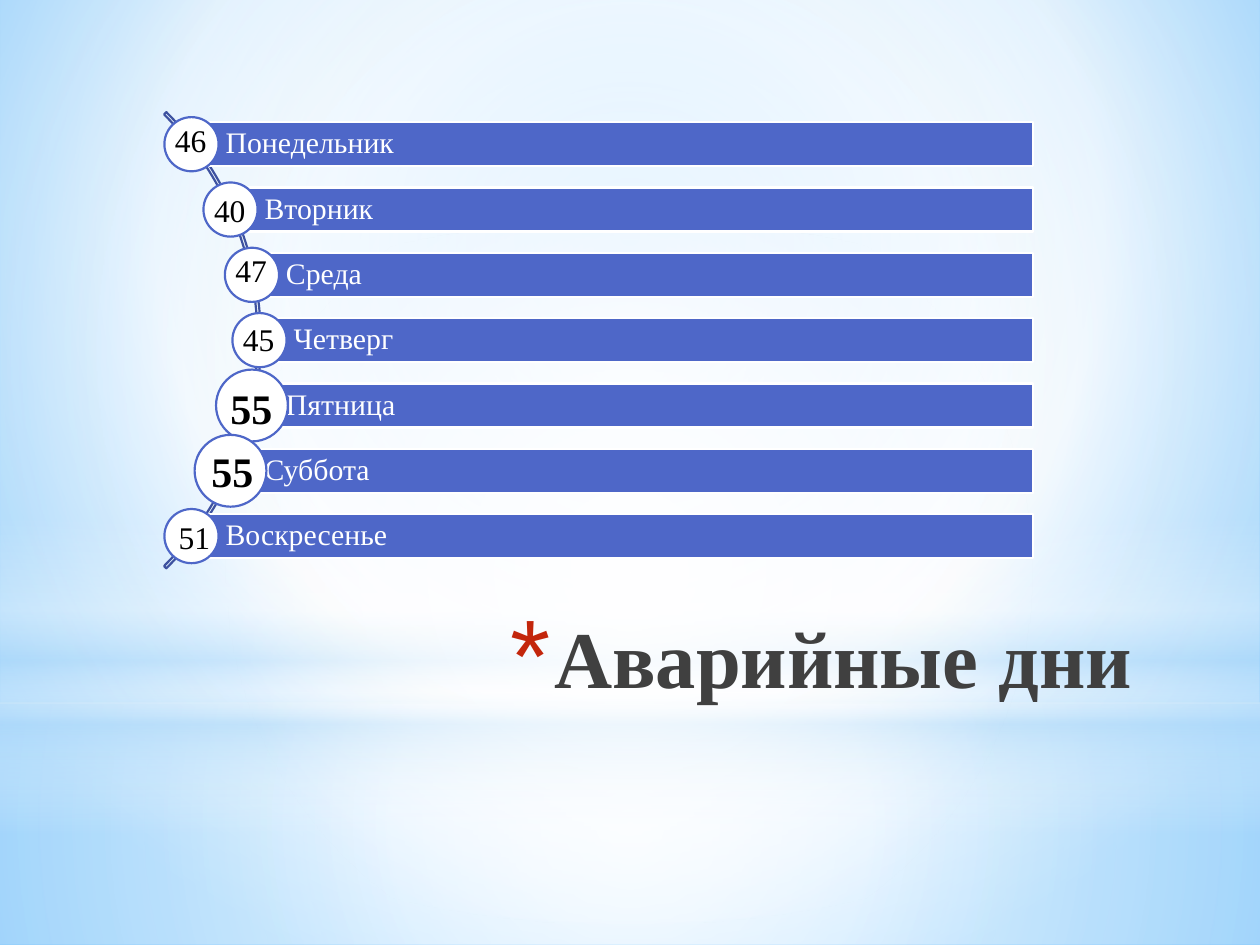
from typing import NamedTuple

from lxml import etree
from pptx import Presentation
from pptx.dml.color import RGBColor
from pptx.enum import shapes, text
from pptx.oxml import ns
from pptx.util import Inches, Pt

WHITE = RGBColor(0xFF, 0xFF, 0xFF)
BLACK = RGBColor(0, 0, 0)
GREY = RGBColor(0x40, 0x40, 0x40)
INDIGO = RGBColor(0x4E, 0x67, 0xC8)
DARK_INDIGO = RGBColor(0x3E, 0x52, 0xA0)
SKY = RGBColor(0x9E, 0xD5, 0xFF)
PALE_SKY = RGBColor(0xB4, 0xDC, 0xFA)
DEEP_SKY = RGBColor(0x5B, 0xB9, 0xFF)
BULLET_RED = RGBColor(0xC3, 0x26, 0x0C)

FONT = "Times New Roman"
BAR_RIGHT, BAR_TOP, BAR_HEIGHT = 8.2, 0.97, 0.35
BAR_STEP = (4.08 - BAR_TOP) / 6
CENTRE = (50, 50, 50, 50)


class Stop(NamedTuple):
    position: int
    color: RGBColor
    opacity: int = 100


class Glow(NamedTuple):
    kind: shapes.MSO_SHAPE
    top: float
    height: float
    stops: list[Stop]
    focus: tuple | None = CENTRE


class Day(NamedTuple):
    name: str
    count: str
    left: float
    label_left: float
    label_top: float
    label_width: float = 0.45
    peak: bool = False


GLOWS = [
    Glow(shapes.MSO_SHAPE.RECTANGLE, 5.58, 1.92,
         [Stop(0, WHITE, 91), Stop(37, WHITE, 76), Stop(100, PALE_SKY, 79)]),
    Glow(shapes.MSO_SHAPE.RECTANGLE, 0, 5.58,
         [Stop(0, WHITE, 89), Stop(48, WHITE, 62), Stop(100, PALE_SKY, 79)]),
    Glow(shapes.MSO_SHAPE.RECTANGLE, 4.12, 2.5,
         [Stop(0, WHITE, 0), Stop(29, WHITE, 30), Stop(45, PALE_SKY, 40),
          Stop(55, WHITE, 26), Stop(65, PALE_SKY, 60), Stop(100, WHITE, 0)], None),
    Glow(shapes.MSO_SHAPE.OVAL, 1.75, 5.58, [Stop(0, WHITE), Stop(56, WHITE, 0)]),
]

DAYS = [
    Day("Понедельник", "46", 1.52, 1.29, 0.91, 0.76),
    Day("Вторник", "40", 1.83, 1.6, 1.47),
    Day("Среда", "47", 2, 1.77, 1.94),
    Day("Четверг", "45", 2.06, 1.83, 2.49),
    Day("Пятница", "55", 2, 1.73, 2.99, 0.54, True),
    Day("Суббота", "55", 1.83, 1.58, 3.49, 0.54, True),
    Day("Воскресенье", "51", 1.52, 1.32, 4.06),
]


def add_element(parent, tag: str, **attributes):
    """Append a DrawingML child element."""
    values = {name: str(value) for name, value in attributes.items()}
    return etree.SubElement(parent, ns.qn(tag), values)


def set_gradient(fill, holder, stops: list[Stop], focus: tuple | None) -> None:
    """Fill with a circular gradient around focus, or a vertical one without it."""
    fill.gradient()
    gradient = holder.find(".//" + ns.qn("a:gradFill"))
    for child in list(gradient):
        gradient.remove(child)
    stop_list = add_element(gradient, "a:gsLst")
    for stop in stops:
        mark = add_element(stop_list, "a:gs", pos=stop.position * 1000)
        color = add_element(mark, "a:srgbClr", val=stop.color)
        if stop.opacity < 100:
            add_element(color, "a:alpha", val=stop.opacity * 1000)
    if focus:
        circle = add_element(gradient, "a:path", path="circle")
        sides = {side: value * 1000 for side, value in zip("ltrb", focus)}
        add_element(circle, "a:fillToRect", **sides)
    else:
        add_element(gradient, "a:lin", ang=5400000, scaled=0)


def add_shape(page, kind, left: float, top: float, width: float, height: float,
              fill: RGBColor | None = None, line: RGBColor | None = None):
    """Add a flat preset shape."""
    shape = page.shapes.add_shape(
        kind, Inches(left), Inches(top), Inches(width), Inches(height))
    shape.shadow.inherit = False
    if fill is None:
        shape.fill.background()
    else:
        shape.fill.solid()
        shape.fill.fore_color.rgb = fill
    if line is None:
        shape.line.fill.background()
    else:
        shape.line.color.rgb = line
        shape.line.width = Pt(1.25)
    return shape


def write(frame, words: str, size: float, color: RGBColor, bold: bool = False,
          align=text.PP_ALIGN.LEFT):
    """Write one styled paragraph."""
    para = frame.paragraphs[0]
    para.text = words
    para.alignment = align
    para.font.name = FONT
    para.font.size = Pt(size)
    para.font.bold = bold
    para.font.color.rgb = color
    return para


def add_text(page, left: float, top: float, width: float, height: float):
    """Add a text box and return its frame."""
    box = page.shapes.add_textbox(
        Inches(left), Inches(top), Inches(width), Inches(height))
    return box.text_frame


def add_backdrop(page) -> None:
    """Draw the sky background and its glows."""
    set_gradient(page.background.fill, page.element,
                 [Stop(0, SKY), Stop(60, WHITE), Stop(100, DEEP_SKY)], (20, 10, 20, 60))
    for glow in GLOWS:
        shape = add_shape(page, glow.kind, 0, glow.top, 10, glow.height)
        set_gradient(shape.fill, shape.element.spPr, glow.stops, glow.focus)


def add_title(page) -> None:
    """Write the title with its red asterisk bullet."""
    frame = add_text(page, 1.96, 4.78, 7.12, 1.25)
    frame.word_wrap = True
    para = write(frame, "Аварийные дни", 46, GREY, True, text.PP_ALIGN.RIGHT)
    properties = para._p.get_or_add_pPr()
    properties.set("marL", str(Inches(0.35)))
    properties.set("indent", str(-Inches(0.35)))
    bullet_color = etree.Element(ns.qn("a:buClr"))
    add_element(bullet_color, "a:srgbClr", val=BULLET_RED)
    bullet_size = etree.Element(ns.qn("a:buSzPct"), val="128000")
    bullet_font = etree.Element(ns.qn("a:buFont"), typeface="Arial")
    bullet = etree.Element(ns.qn("a:buChar"), char="*")
    for index, part in enumerate((bullet_color, bullet_size, bullet_font, bullet)):
        properties.insert(index, part)


def add_day(page, day: Day, top: float) -> None:
    """Draw the bar of a day with its circle."""
    bar = add_shape(page, shapes.MSO_SHAPE.RECTANGLE, day.left, top,
                    BAR_RIGHT - day.left, BAR_HEIGHT, INDIGO, WHITE)
    frame = bar.text_frame
    frame.word_wrap = True
    frame.vertical_anchor = text.MSO_ANCHOR.MIDDLE
    frame.margin_left = Inches(0.27)
    frame.margin_right = frame.margin_top = frame.margin_bottom = Inches(0.05)
    write(frame, day.name, 17, WHITE).line_spacing = 0.9
    size = 0.57 if day.peak else 0.43
    add_shape(page, shapes.MSO_SHAPE.OVAL, day.left - size / 2,
              top + (BAR_HEIGHT - size) / 2, size, size, WHITE, INDIGO)


def add_count(page, day: Day) -> None:
    """Write the count of a day over its circle."""
    frame = add_text(page, day.label_left, day.label_top, day.label_width,
                     0.5 if day.peak else 0.4)
    frame.word_wrap = False
    write(frame, day.count, 24 if day.peak else 18, BLACK, day.peak)


def main() -> None:
    """Build the slide of accident days."""
    deck = Presentation()
    deck.slide_width, deck.slide_height = Inches(10), Inches(7.5)
    page = deck.slides.add_slide(deck.slide_layouts[6])
    add_backdrop(page)
    add_title(page)
    arc = add_shape(page, shapes.MSO_SHAPE.BLOCK_ARC, -3.05, 0.14, 5.12, 5.12,
                    line=DARK_INDIGO)
    for index, value in enumerate((189, 27, 0.005)):
        arc.adjustments[index] = value
    for row, day in enumerate(DAYS):
        add_day(page, day, BAR_TOP + row * BAR_STEP)
    for day in DAYS:
        add_count(page, day)
    deck.save("out.pptx")


if __name__ == "__main__":
    main()
